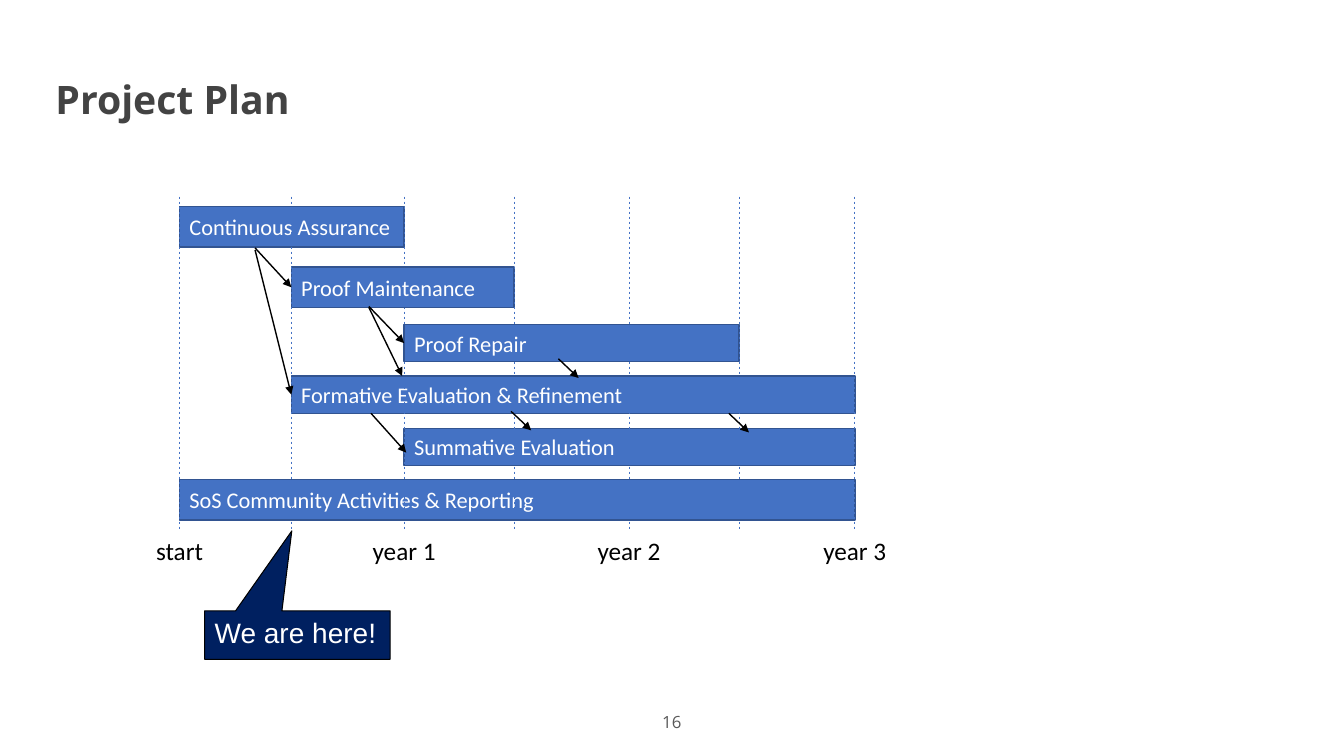
"""Build the project plan slide: a three-year bar schedule with dependencies."""
from dataclasses import dataclass
from typing import Any, Optional

from lxml.etree import SubElement
from pptx import Presentation
from pptx.dml.color import RGBColor
from pptx.enum.dml import MSO_LINE_DASH_STYLE as Dash
from pptx.enum.shapes import MSO_CONNECTOR as Link, MSO_SHAPE as Preset
from pptx.enum.text import MSO_ANCHOR as Anchor, MSO_AUTO_SIZE as AutoSize, PP_ALIGN as Align
from pptx.oxml.ns import qn
from pptx.util import Pt

WHITE = RGBColor(0xFF, 0xFF, 0xFF)
BLACK = RGBColor(0x00, 0x00, 0x00)
BLUE = RGBColor(0x44, 0x72, 0xC4)
BLUE_EDGE = RGBColor(0x32, 0x54, 0x91)
NAVY = RGBColor(0x00, 0x20, 0x60)
TITLE_GREY = RGBColor(0x43, 0x43, 0x43)
NUMBER_GREY = RGBColor(0x59, 0x59, 0x59)

HALF_YEARS = (128.2, 208.1, 288.7, 367.2, 449.3, 527.8, 610.6)
GRID_TOP, GRID_BOTTOM = 140.4, 379.4
LABEL_TOP, LABEL_WIDTH, LABEL_HEIGHT = 378.7, 60, 28.8
YEAR_LABELS = ("start", "year 1", "year 2", "year 3")
LEFT_SIDE = 1


@dataclass(frozen=True)
class Style:
    font: str
    size: float
    color: RGBColor
    bold: bool = False
    align: Align = Align.LEFT
    anchor: Anchor = Anchor.TOP
    wrap: bool = True


@dataclass(frozen=True)
class Bar:
    text: str
    start: int
    end: int
    top: float
    height: float


@dataclass(frozen=True)
class Arrow:
    x1: float
    y1: float
    x2: float
    y2: float
    target: Optional[str] = None


TITLE_STYLE = Style("Open Sans", 28, TITLE_GREY, bold=True)
NUMBER_STYLE = Style("Open Sans", 12, NUMBER_GREY, align=Align.CENTER, anchor=Anchor.MIDDLE)
BAR_STYLE = Style("Calibri", 16, WHITE, anchor=Anchor.MIDDLE)
LABEL_STYLE = Style("Calibri", 18, BLACK, align=Align.CENTER, wrap=False)
CALLOUT_STYLE = Style("Arial", 20, WHITE, wrap=False)

BACK_BARS = (
    Bar("Formative Evaluation & Refinement", 1, 6, 268.6, 26.6),
    Bar("Continuous Assurance", 0, 2, 147.6, 28.8),
    Bar("Summative Evaluation", 2, 6, 306, 26.6),
    Bar("SoS Community Activities & Reporting", 0, 6, 342.7, 28.8),
)
FRONT_BARS = (
    Bar("Proof Maintenance", 1, 3, 190.8, 28.8),
    Bar("Proof Repair", 2, 5, 231.8, 26.6),
)
ARROWS = (
    Arrow(182.2, 177.1, 208.1, 205.2, "Proof Maintenance"),
    Arrow(182.2, 178.6, 208.1, 281.9, "Formative Evaluation & Refinement"),
    Arrow(265, 295.2, 290.2, 323.3),
    Arrow(263.5, 218.9, 288.7, 245.1, "Proof Repair"),
    Arrow(263.5, 219.6, 287.3, 268.6),
    Arrow(398.9, 256.3, 413.3, 270),
    Arrow(520.6, 295.2, 535, 308.9),
    Arrow(365, 293.8, 379.4, 307.4),
)


def write(shape: Any, text: str, style: Style, margin: Optional[float] = None) -> Any:
    """Put one styled paragraph into a shape and return the paragraph."""
    frame = shape.text_frame
    frame.text = text
    frame_values = {"auto_size": AutoSize.NONE, "word_wrap": style.wrap,
                    "vertical_anchor": style.anchor}
    if margin is not None:
        for side in ("left", "top", "right", "bottom"):
            frame_values[f"margin_{side}"] = Pt(margin)
    for name, value in frame_values.items():
        setattr(frame, name, value)
    para = frame.paragraphs[0]
    para.alignment = style.align
    font = para.runs[0].font
    for name, value in {"name": style.font, "size": Pt(style.size), "bold": style.bold}.items():
        setattr(font, name, value)
    font.color.rgb = style.color
    return para


def add_text(page: Any, text: str, left: float, top: float, width: float, height: float,
             style: Style, margin: Optional[float] = None) -> Any:
    """Add a text box and return its paragraph."""
    box = page.shapes.add_textbox(Pt(left), Pt(top), Pt(width), Pt(height))
    return write(box, text, style, margin)


def add_block(page: Any, preset: Preset, left: float, top: float, width: float, height: float,
              fill: RGBColor, edge: RGBColor, weight: float) -> Any:
    """Add a filled and outlined preset shape without a shadow."""
    shape = page.shapes.add_shape(preset, Pt(left), Pt(top), Pt(width), Pt(height))
    shape.shadow.inherit = False
    shape.fill.solid()
    shape.fill.fore_color.rgb = fill
    shape.line.color.rgb = edge
    shape.line.width = Pt(weight)
    return shape


def add_line(page: Any, x1: float, y1: float, x2: float, y2: float,
             color: RGBColor, weight: float) -> Any:
    """Add a straight connector without a shadow."""
    line = page.shapes.add_connector(Link.STRAIGHT, Pt(x1), Pt(y1), Pt(x2), Pt(y2))
    line.line.color.rgb = color
    line.line.width = Pt(weight)
    SubElement(line._element.spPr, qn("a:effectLst"))
    return line


def add_bars(page: Any, bars: tuple[Bar, ...]) -> dict[str, Any]:
    """Draw bars between half-year marks and return them by name."""
    drawn = {}
    for bar in bars:
        left, right = HALF_YEARS[bar.start], HALF_YEARS[bar.end]
        shape = add_block(page, Preset.FLOWCHART_PROCESS, left, bar.top, right - left,
                          bar.height, BLUE, BLUE_EDGE, 1)
        write(shape, bar.text, BAR_STYLE)
        drawn[bar.text] = shape
    return drawn


def add_marks(page: Any, marks: tuple[float, ...]) -> None:
    """Draw dashed vertical time marks."""
    for x in marks:
        mark = add_line(page, x, GRID_TOP, x, GRID_BOTTOM, BLUE, 0.5)
        mark.line.dash_style = Dash.DASH


def add_arrow(page: Any, arrow: Arrow, bars: dict[str, Any]) -> None:
    """Draw a dependency arrow, joined to its target bar if it has one."""
    line = add_line(page, arrow.x1, arrow.y1, arrow.x2, arrow.y2, BLACK, 1)
    SubElement(line.line._get_or_add_ln(), qn("a:tailEnd"), type="triangle")
    if arrow.target:
        line.end_connect(bars[arrow.target], LEFT_SIDE)


def main() -> None:
    """Build and save the deck."""
    deck = Presentation()
    deck.slide_width, deck.slide_height = Pt(960), Pt(540)
    page = deck.slides.add_slide(deck.slide_layouts[5])

    title = page.shapes.title
    for name, value in {"left": 32.4, "top": 46.8, "width": 894.2, "height": 59.8}.items():
        setattr(title, name, Pt(value))
    write(title, "Project Plan", TITLE_STYLE, 7.2)
    number = add_text(page, "16", 465.1, 506.9, 29.5, 20.2, NUMBER_STYLE, 7.2)
    number.line_spacing = 0.8

    bars = add_bars(page, BACK_BARS)
    years = HALF_YEARS[::2]
    add_marks(page, years)
    for x, label in zip(years, YEAR_LABELS):
        add_text(page, label, x - LABEL_WIDTH / 2, LABEL_TOP, LABEL_WIDTH, LABEL_HEIGHT,
                 LABEL_STYLE)
    bars.update(add_bars(page, FRONT_BARS))
    add_marks(page, HALF_YEARS[1::2])
    for arrow in ARROWS:
        add_arrow(page, arrow, bars)

    callout = add_block(page, Preset.RECTANGULAR_CALLOUT, 146.2, 436.3, 132.5, 34.6,
                        NAVY, BLACK, 0.75)
    callout.adjustments[0], callout.adjustments[1] = -0.03, -2.15
    write(callout, "We are here!", CALLOUT_STYLE)
    deck.save("out.pptx")


if __name__ == "__main__":
    main()
